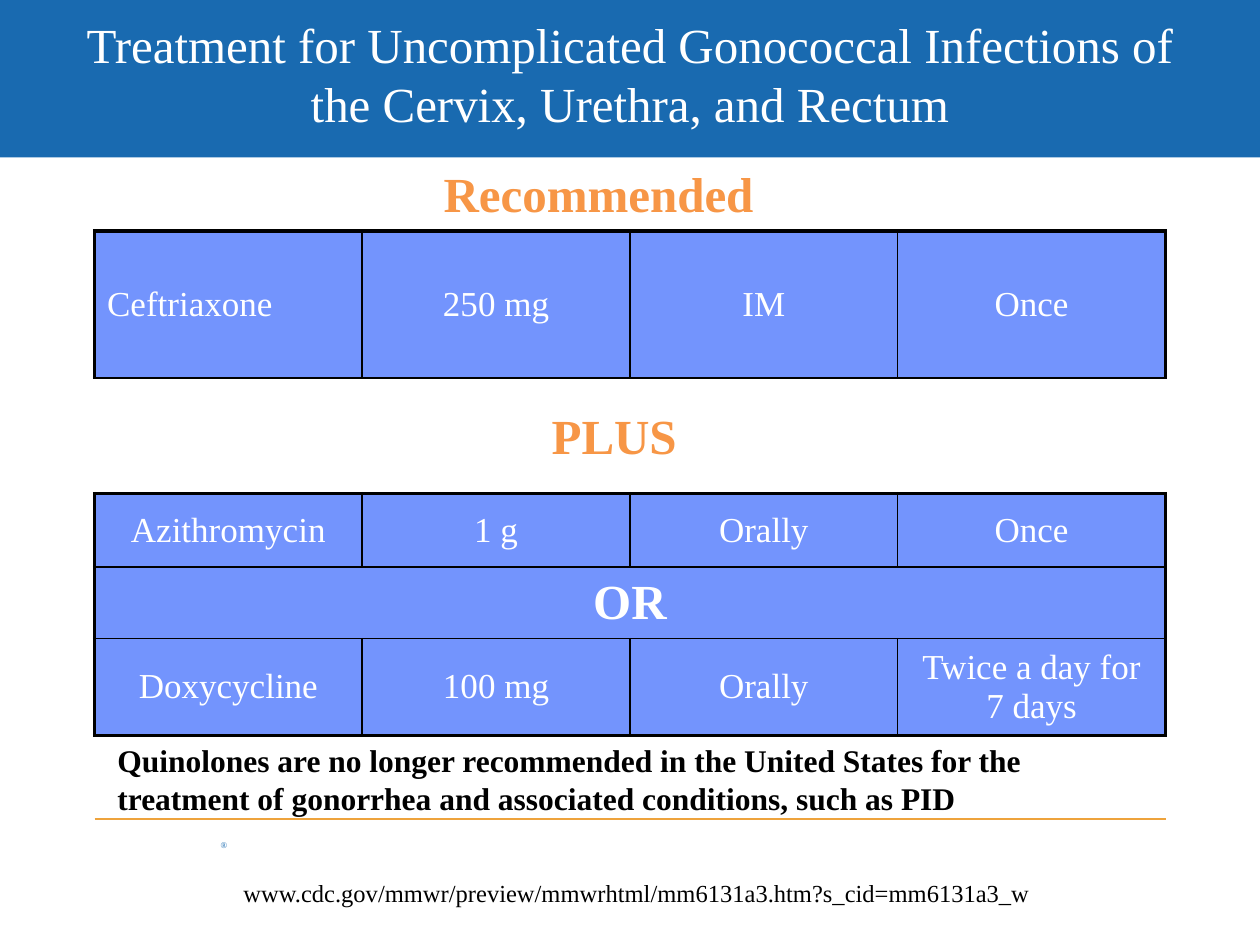
"""Build a slide on the treatment of uncomplicated gonococcal infections."""
import pptx
import pptx.dml.color
import pptx.enum.shapes
import pptx.enum.text
import pptx.oxml
import pptx.oxml.ns
import pptx.util

Pt = pptx.util.Pt
ALIGN = pptx.enum.text.PP_ALIGN
ANCHOR = pptx.enum.text.MSO_ANCHOR
FONT = "Times New Roman"
COLORS = {
    "banner": "196AB0",
    "rule": "EEA33C",
    "cell": "7394FD",
    "heading": "F79646",
    "border": "000000",
    "dark": "000000",
    "light": "FFFFFF",
}
THIN, THICK = 1, 2.25
TABLE_LEFT, TABLE_WIDTH = 54, 612


def rgb(name):
    """Return the named colour."""
    return pptx.dml.color.RGBColor.from_string(COLORS[name])


def write(frame, text, size, color, bold=False, align=ALIGN.LEFT):
    """Fill a text frame with one formatted paragraph."""
    frame.text = text
    para = frame.paragraphs[0]
    para.alignment = align
    for span in para.runs:
        span.font.name = FONT
        span.font.size = Pt(size)
        span.font.bold = bold
        span.font.color.rgb = rgb(color)


def add_text(page, place, text, size, color, bold=False, align=ALIGN.LEFT,
             anchor=ANCHOR.TOP, inset=None):
    """Add a wrapping text box."""
    frame = page.shapes.add_textbox(*map(Pt, place)).text_frame
    frame.word_wrap = True
    frame.vertical_anchor = anchor
    if inset is not None:
        frame.margin_left = frame.margin_right = Pt(inset)
        frame.margin_top = frame.margin_bottom = Pt(inset)
    write(frame, text, size, color, bold, align)


def add_banner(page):
    """Add the coloured band behind the title."""
    banner = page.shapes.add_shape(
        pptx.enum.shapes.MSO_SHAPE.RECTANGLE, 0, 0, Pt(720), Pt(90))
    banner.shadow.inherit = False
    banner.fill.solid()
    banner.fill.fore_color.rgb = rgb("banner")
    banner.line.fill.background()


def add_rule(page, top):
    """Add a thin horizontal line as wide as the tables."""
    rule = page.shapes.add_connector(
        pptx.enum.shapes.MSO_CONNECTOR.STRAIGHT,
        Pt(TABLE_LEFT), Pt(top), Pt(TABLE_LEFT + TABLE_WIDTH), Pt(top))
    rule.line.color.rgb = rgb("rule")
    rule.line.width = Pt(0.75)
    rule._element.spPr.append(pptx.oxml.parse_xml(
        f"<a:effectLst {pptx.oxml.ns.nsdecls('a')}/>"))


def set_borders(cell, widths):
    """Draw the cell sides, given as a dict of side letter and width."""
    properties = cell._tc.get_or_add_tcPr()
    for side, width in widths.items():
        properties.append(pptx.oxml.parse_xml(
            f'<a:ln{side} {pptx.oxml.ns.nsdecls("a")} w="{Pt(width)}">'
            f'<a:solidFill><a:srgbClr val="{COLORS["border"]}"/></a:solidFill>'
            f'</a:ln{side}>'))


def add_regimens(page, top, heights, rows, bottom_width):
    """Add a drug table; a row with a single text spans all columns."""
    columns = max(map(len, rows))
    table = page.shapes.add_table(
        len(rows), columns, Pt(TABLE_LEFT), Pt(top),
        Pt(TABLE_WIDTH), Pt(sum(heights))).table
    table.first_row = table.horz_banding = False
    for r, (texts, height) in enumerate(zip(rows, heights)):
        table.rows[r].height = Pt(height)
        heading = len(texts) == 1
        if heading:
            table.cell(r, 0).merge(table.cell(r, columns - 1))
        for c in range(columns):
            cell = table.cell(r, c)
            set_borders(cell, {
                "L": THICK if c == 0 else THIN,
                "R": THICK if c + cell.span_width == columns else THIN,
                "T": THICK if r == 0 else THIN,
                "B": bottom_width if r == len(rows) - 1 else THIN,
            })
            cell.fill.solid()
            cell.fill.fore_color.rgb = rgb("cell")
            cell.vertical_anchor = ANCHOR.MIDDLE
            if c < len(texts):
                write(cell.text_frame, texts[c], 28 if heading else 20,
                      "light", heading, ALIGN.CENTER)
    return table


def main():
    """Build and save the slide."""
    deck = pptx.Presentation()
    deck.slide_width, deck.slide_height = Pt(720), Pt(540)
    page = deck.slides.add_slide(deck.slide_layouts[6])

    add_banner(page)
    add_text(page, (126, 480, 18, 6), "®", 5, "banner", inset=0)
    add_rule(page, 468)
    add_text(page, (36, 6, 648, 72),
             "Treatment for Uncomplicated Gonococcal Infections of the Cervix, "
             "Urethra, and Rectum",
             28, "light", align=ALIGN.CENTER, anchor=ANCHOR.MIDDLE)

    first = add_regimens(page, 132, [84],
                         [["Ceftriaxone", "250 mg", "IM", "Once"]], THIN)
    first.cell(0, 0).text_frame.paragraphs[0].alignment = ALIGN.LEFT
    add_regimens(page, 282, [42, 41, 55], [
        ["Azithromycin", "1 g", "Orally", "Once"],
        ["OR"],
        ["Doxycycline", "100 mg", "Orally", "Twice a day for 7 days"],
    ], THICK)

    for text, place in (("Recommended", (42, 90, 600, 41)),
                        ("PLUS", (192, 228, 318, 41))):
        add_text(page, place, text, 28, "heading", True, ALIGN.CENTER)
    add_text(page, (60, 420, 594, 51),
             "Quinolones are no longer recommended in the United States for the "
             "treatment of gonorrhea and associated conditions, such as PID",
             18, "dark", True)
    add_text(page, (132, 498, 612, 24),
             "www.cdc.gov/mmwr/preview/mmwrhtml/mm6131a3.htm?s_cid=mm6131a3_w",
             14, "dark")
    deck.save("out.pptx")


if __name__ == "__main__":
    main()
